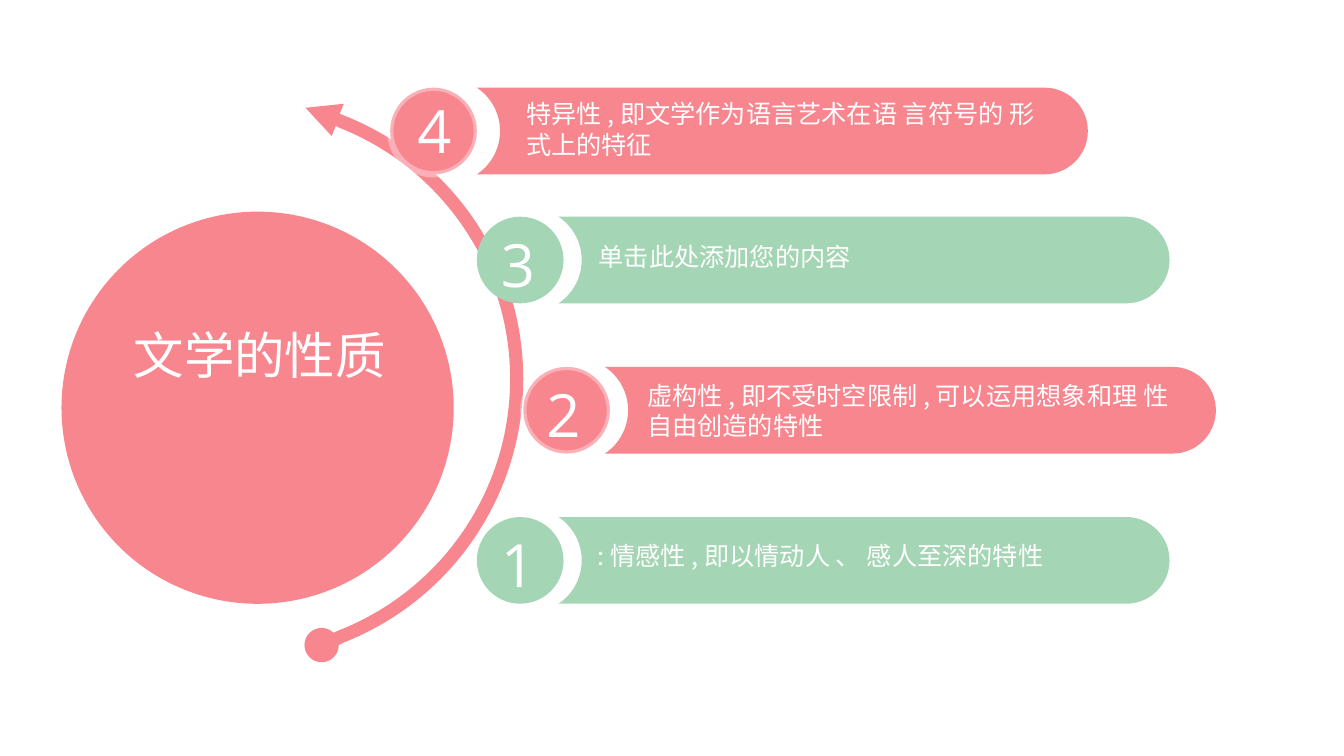
import math
from dataclasses import dataclass

from lxml import etree
from pptx import Presentation
from pptx.dml.color import RGBColor
from pptx.enum.shapes import MSO_SHAPE
from pptx.enum.text import MSO_ANCHOR, MSO_AUTO_SIZE, PP_ALIGN
from pptx.oxml.ns import qn
from pptx.util import Inches, Pt

OVAL = MSO_SHAPE.OVAL
TOP = MSO_ANCHOR.TOP
GROW = MSO_AUTO_SIZE.SHAPE_TO_FIT_TEXT
LEFT, CENTER = PP_ALIGN.LEFT, PP_ALIGN.CENTER

COLORS = {"pink": "F8868F", "green": "A4D5B4", "white": "FFFFFF"}
CHINESE_FONT = "Noto Sans CJK SC"
DIGIT_FONT = "Open Sans"
BADGE_SIZE = 0.86
BAR_WIDTH = 6.06
NOTCH_DEPTH = 0.23


@dataclass
class Item:
    digit: str
    text: str
    color: str
    ringed: bool
    top: float
    badge_left: float
    bar_left: float
    digit_offset: tuple
    text_offset: tuple
    text_height: float


ITEMS = [
    Item("2", "虚构性 , 即不受时空限制 , 可以运用想象和理 性 自由创造的特性",
         "pink", True, 3.64, 5.19, 6, (0.13, 0.06), (0.32, 0.08), 0.71),
    Item("3", "单击此处添加您的内容",
         "green", False, 2.15, 4.73, 5.54, (0.14, 0.06), (0.3, 0.19), 0.4),
    Item("1", ": 情感性 , 即以情动人 、 感人至深的特性",
         "green", False, 5.13, 4.73, 5.54, (0.14, 0.06), (0.29, 0.18), 0.4),
    Item("4", "特异性 , 即文学作为语言艺术在语 言符号的 形式上的特征",
         "pink", True, 0.87, 3.87, 4.73, (0.17, 0.01), (0.39, 0.06), 0.71),
]


def color(name):
    return RGBColor.from_string(COLORS[name])


def arc(center_x, center_y, radius, *degrees):
    def point(angle, pull=0):
        cosine, sine = math.cos(angle), math.sin(angle)
        return (center_x + radius * (cosine - pull * sine),
                center_y + radius * (sine + pull * cosine))

    angles = [math.radians(degree) for degree in degrees]
    steps = [[point(angles[0])]]
    for start, end in zip(angles, angles[1:]):
        pull = 4 / 3 * math.tan((end - start) / 4)
        steps.append([point(start, pull), point(end, -pull), point(end)])
    return steps


def paint(shape, fill):
    shape.shadow.inherit = False
    shape.fill.solid()
    shape.fill.fore_color.rgb = color(fill)
    shape.line.fill.background()


def add_outline(slide, steps, fill):
    points = [(Inches(x), Inches(y)) for step in steps for x, y in step]
    builder = slide.shapes.build_freeform(*points[0])
    builder.add_line_segments(points[1:], close=True)
    shape = builder.convert_to_shape()
    lines = iter(shape._element.findall(".//" + qn("a:lnTo")))
    for step in steps[1:]:
        segments = [next(lines) for _ in step]
        if len(step) == 3:
            curve = etree.Element(qn("a:cubicBezTo"))
            segments[0].addprevious(curve)
            for segment in segments:
                curve.append(segment[0])
                segment.getparent().remove(segment)
    paint(shape, fill)


def add_circle(slide, left, top, size, fill):
    shape = slide.shapes.add_shape(
        OVAL, Inches(left), Inches(top), Inches(size), Inches(size))
    paint(shape, fill)
    return shape


def add_text(slide, box, text, size, font_name, alignment=LEFT, wrap=True):
    shape = slide.shapes.add_textbox(*[Inches(length) for length in box])
    frame = shape.text_frame
    frame.word_wrap = wrap
    frame.auto_size = GROW
    frame.vertical_anchor = TOP
    paragraph = frame.paragraphs[0]
    paragraph.text = text
    paragraph.alignment = alignment
    font = paragraph.font
    font.size = Pt(size)
    font.name = font_name
    font.color.rgb = color("white")
    properties = paragraph._p.pPr.find(qn("a:defRPr"))
    etree.SubElement(properties, qn("a:ea")).set("typeface", font_name)


def add_ring(shape):
    shape.line.width = Pt(4.5)
    shape.line.color.rgb = color("white")
    white = shape.line._ln.find(".//" + qn("a:srgbClr"))
    etree.SubElement(white, qn("a:alpha")).set("val", "35000")


def add_title_circle(slide, left, top, size):
    add_circle(slide, left, top, size, "pink")
    add_text(slide, (left + 0.41, top + 1.07, size - 0.78, 0.71),
             "文学的性质", 36, CHINESE_FONT, CENTER)


def add_curved_arrow(slide, center_x, center_y, radius, thickness, sweep):
    head = [(0.95, -2.51), (0.91, -2.41), (0.65, -2.69), (1.03, -2.73), (0.99, -2.63)]
    steps = arc(center_x, center_y, radius, -sweep, 0, sweep)
    steps += arc(center_x + 0.81, center_y + 2.64, 0.17, 0, 90, 180, 270, 314)
    steps += arc(center_x, center_y, radius - thickness, sweep, 0, -sweep)
    steps += [[(center_x + x, center_y + y)] for x, y in head]
    add_outline(slide, steps, "pink")


def add_bar(slide, left, top, width, height, fill):
    half = height / 2
    middle = top + half
    notch_radius = (NOTCH_DEPTH ** 2 + half ** 2) / (2 * NOTCH_DEPTH)
    notch_angle = math.degrees(math.asin(half / notch_radius))
    steps = arc(left + width - half, middle, half, -90, 0, 90)
    steps += arc(left + NOTCH_DEPTH - notch_radius, middle, notch_radius,
                 notch_angle, 0, -notch_angle)
    add_outline(slide, steps, fill)


def add_item(slide, item):
    badge = add_circle(slide, item.badge_left, item.top, BADGE_SIZE, item.color)
    if item.ringed:
        add_ring(badge)
    add_bar(slide, item.bar_left, item.top, BAR_WIDTH, BADGE_SIZE, item.color)
    digit_x, digit_y = item.digit_offset
    add_text(slide, (item.badge_left + digit_x, item.top + digit_y, 0.51, 0.82),
             item.digit, 42.6, DIGIT_FONT, wrap=False)
    text_x, text_y = item.text_offset
    add_text(slide, (item.bar_left + text_x, item.top + text_y, 5.43, item.text_height),
             item.text, 18, CHINESE_FONT)


def main():
    presentation = Presentation()
    presentation.slide_width = Inches(13.33)
    presentation.slide_height = Inches(7.5)
    slide = presentation.slides.add_slide(presentation.slide_layouts[6])
    add_title_circle(slide, 0.61, 2.1, 3.89)
    add_curved_arrow(slide, 2.38, 3.76, 2.81, 0.13, 68.3)
    for item in ITEMS:
        add_item(slide, item)
    presentation.save("out.pptx")


if __name__ == "__main__":
    main()
